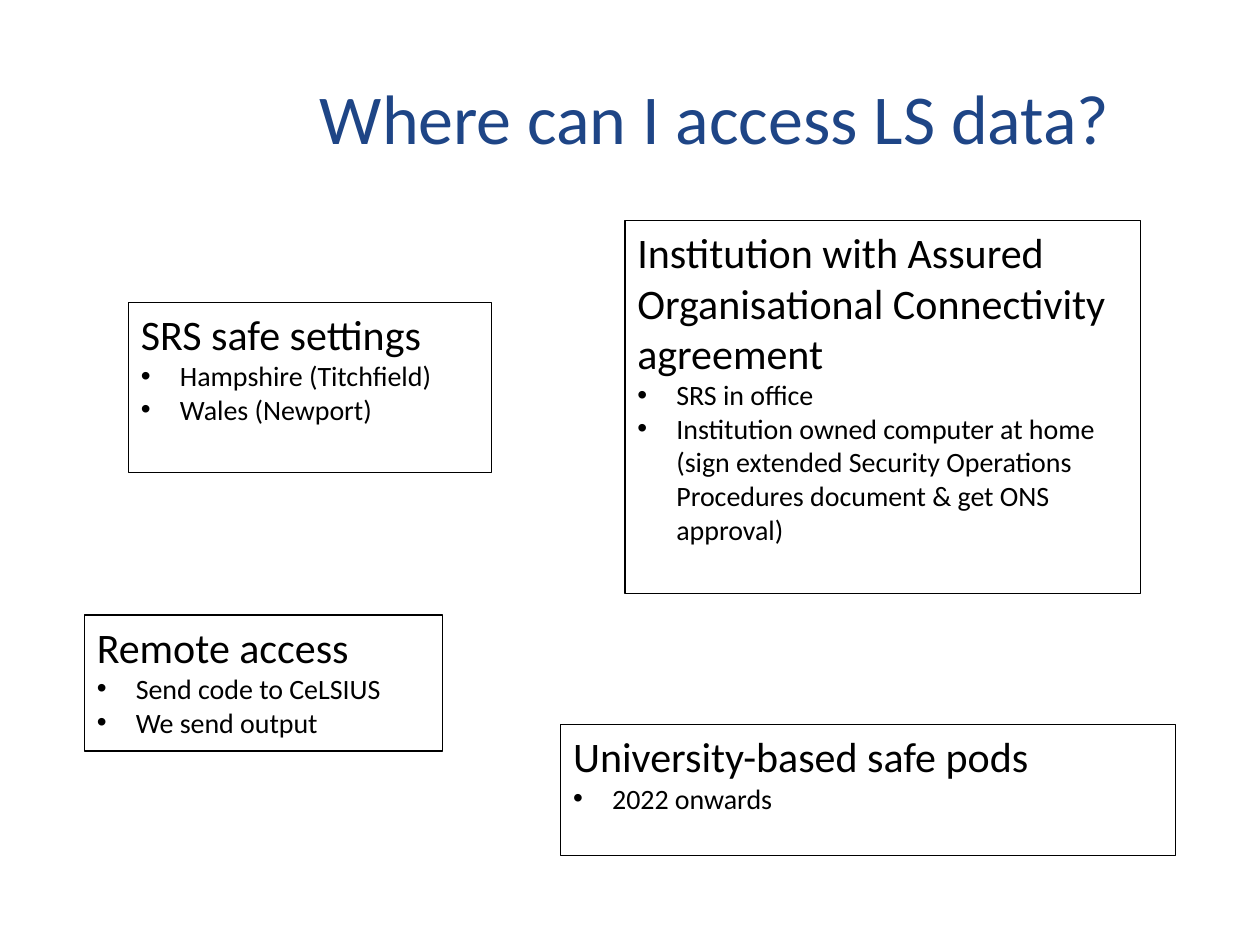
import pptx
import pptx.dml.color
import pptx.enum.shapes
import pptx.enum.text
import pptx.oxml.ns
import pptx.util
from lxml import etree
from pptx.util import Inches

FONT = "Calibri"
BLACK = "000000"
BLUE = "1E4586"

ACCESS_ROUTES = [
    ((1.02, 2.4, 2.88, 1.35), "SRS safe settings",
     ["Hampshire (Titchfield)", "Wales (Newport)"]),
    ((4.96, 1.75, 4.09, 2.96),
     "Institution with Assured Organisational Connectivity agreement",
     ["SRS in office",
      "Institution owned computer at home (sign extended Security Operations "
      "Procedures document & get ONS approval)"]),
    ((4.45, 5.75, 4.88, 1.04), "University-based safe pods",
     ["2022 onwards"]),
    ((0.67, 4.88, 2.84, 1.08), "Remote access",
     ["Send code to CeLSIUS", "We send output"]),
]


def colour(value):
    return pptx.dml.color.RGBColor.from_string(value)


def add_run(para, text, size, hex_colour):
    para.alignment = pptx.enum.text.PP_ALIGN.LEFT
    span = para.add_run()
    span.text = text
    span.font.name = FONT
    span.font.size = pptx.util.Pt(size)
    span.font.color.rgb = colour(hex_colour)


def add_bullet(para):
    properties = para._p.get_or_add_pPr()
    properties.set("marL", str(Inches(0.31)))
    properties.set("indent", str(Inches(-0.31)))
    font = etree.SubElement(properties, pptx.oxml.ns.qn("a:buFont"))
    font.set("typeface", "Arial")
    bullet = etree.SubElement(properties, pptx.oxml.ns.qn("a:buChar"))
    bullet.set("char", "•")


def add_title(slide, text):
    box = slide.shapes.add_textbox(
        Inches(2.44), Inches(0.3), Inches(7.06), Inches(1.25))
    frame = box.text_frame
    frame.word_wrap = True
    frame.vertical_anchor = pptx.enum.text.MSO_ANCHOR.MIDDLE
    add_run(frame.paragraphs[0], text, 40, BLUE)


def add_route_box(slide, place, heading, points):
    box = slide.shapes.add_shape(
        pptx.enum.shapes.MSO_SHAPE.RECTANGLE,
        *[Inches(length) for length in place])
    box.shadow.inherit = False
    box.fill.background()
    box.line.color.rgb = colour(BLACK)
    box.line.width = pptx.util.Pt(0.75)
    frame = box.text_frame
    frame.word_wrap = True
    frame.vertical_anchor = pptx.enum.text.MSO_ANCHOR.TOP
    add_run(frame.paragraphs[0], heading, 24, BLACK)
    for point in points:
        para = frame.add_paragraph()
        add_bullet(para)
        add_run(para, point, 16, BLACK)


def main():
    deck = pptx.Presentation()
    deck.slide_width = Inches(10)
    deck.slide_height = Inches(7.5)
    slide = deck.slides.add_slide(deck.slide_layouts[6])
    add_title(slide, "Where can I access LS data?")
    for place, heading, points in ACCESS_ROUTES:
        add_route_box(slide, place, heading, points)
    deck.save("out.pptx")


if __name__ == "__main__":
    main()
